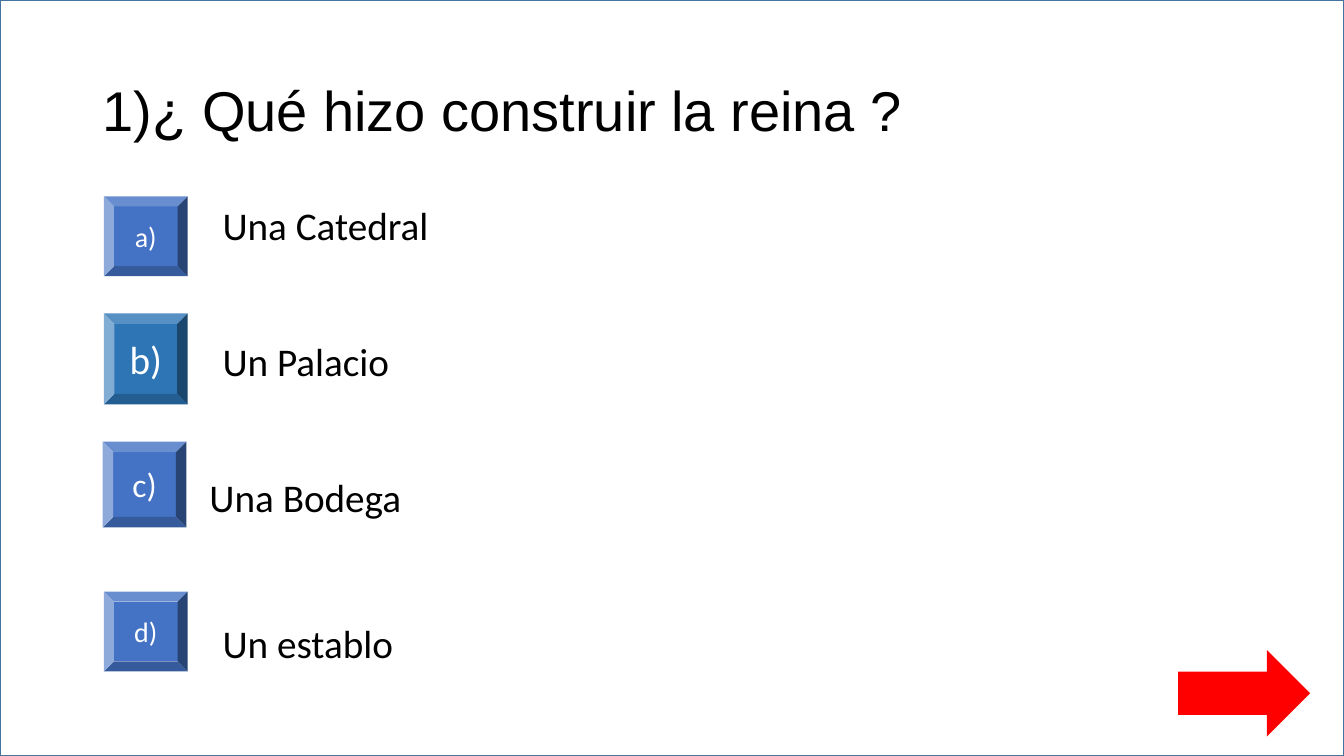
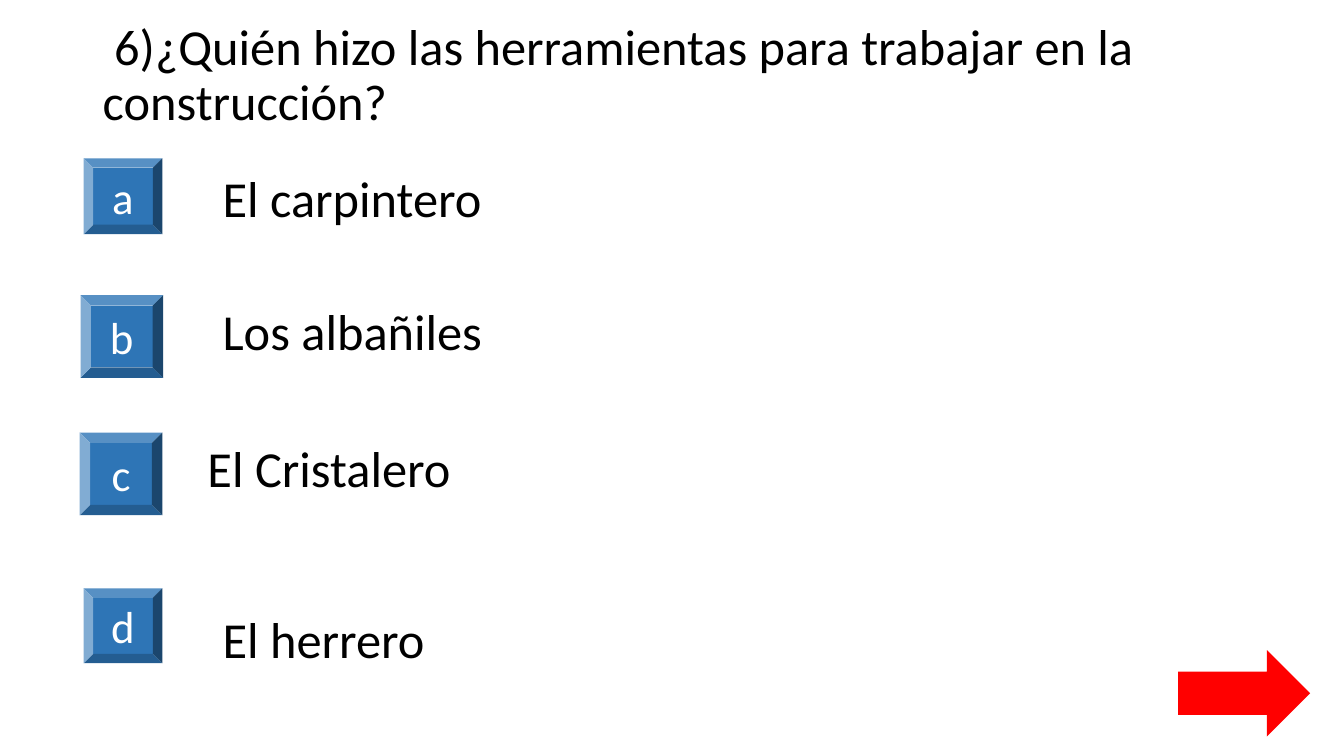
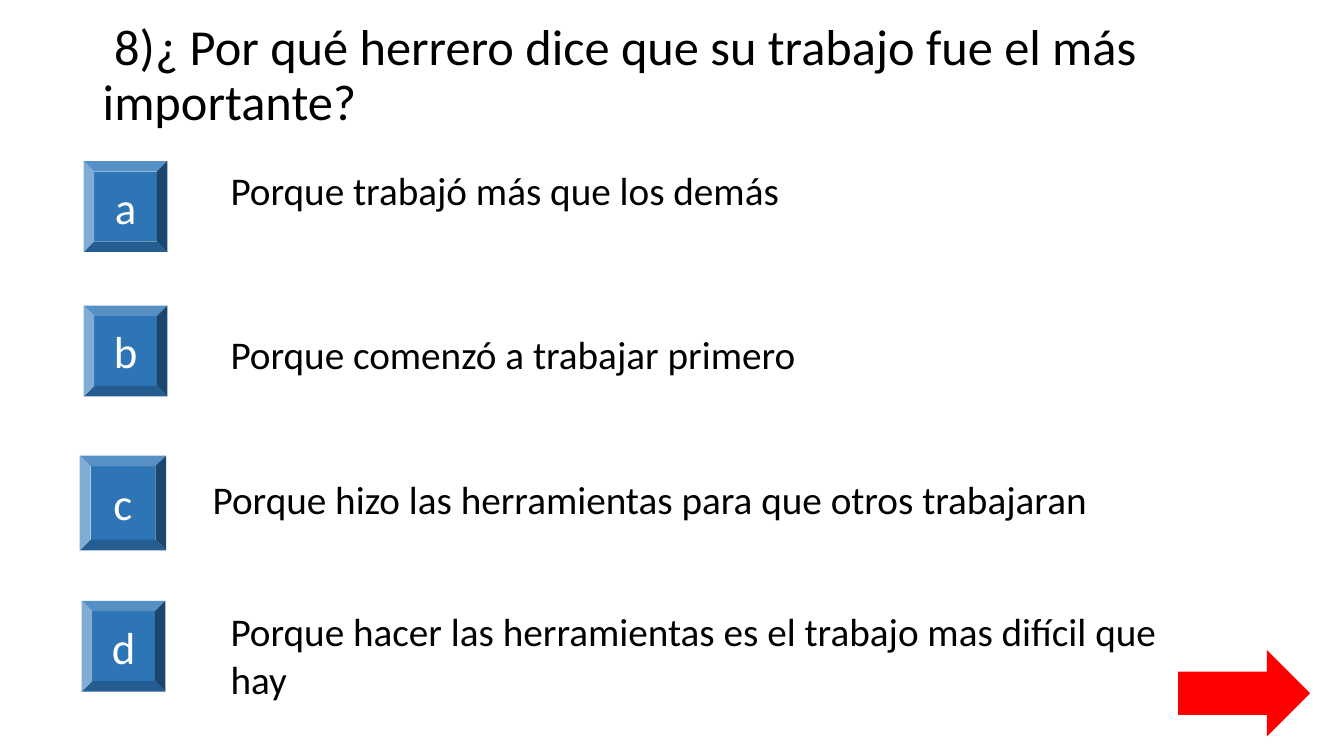
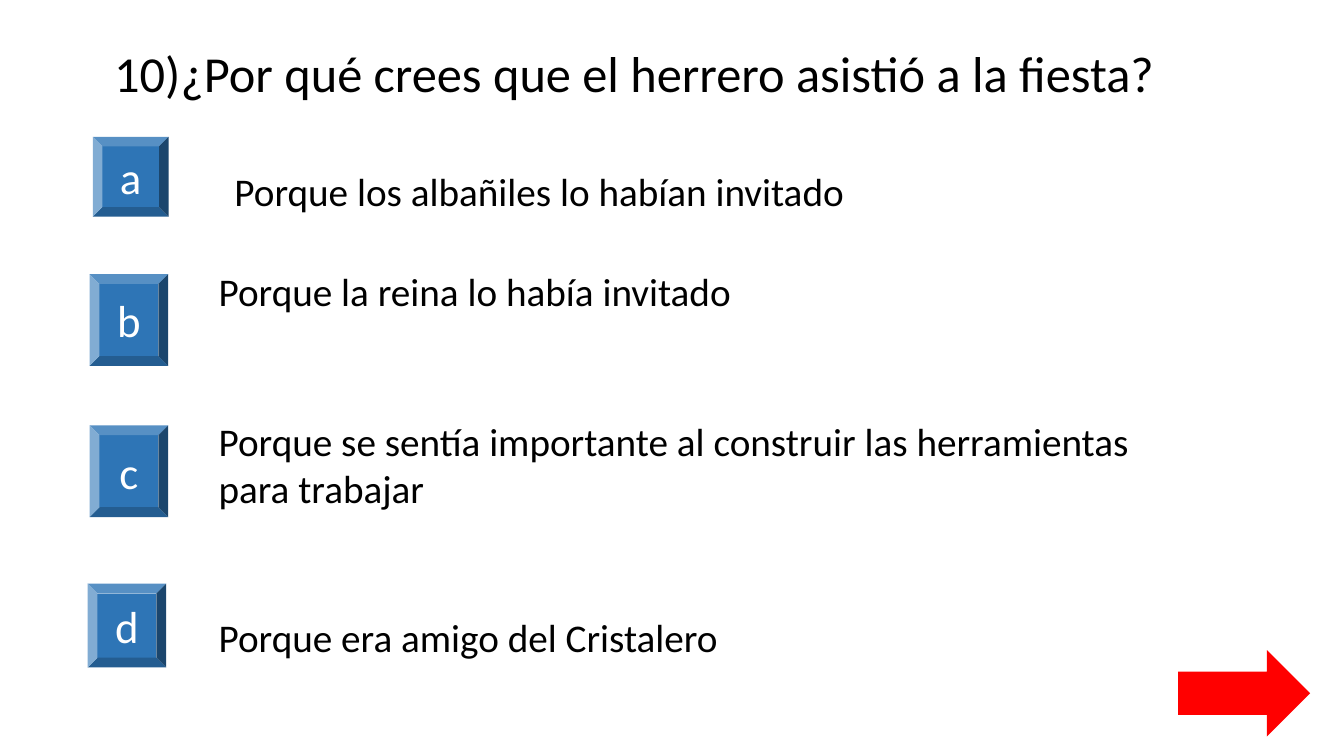
from dataclasses import dataclass

from pptx import Presentation
from pptx.dml.color import RGBColor as Rgb
from pptx.enum.shapes import MSO_SHAPE as Kind
from pptx.enum.text import MSO_ANCHOR as Anchor, MSO_AUTO_SIZE as Fit, PP_ALIGN as Align
from pptx.util import Cm, Pt


# Colours, fonts and type sizes
@dataclass(frozen=True)
class Theme:
    white: str = "FFFFFF"
    black: str = "000000"
    frame: str = "43739E"
    blue: str = "2E75B6"
    royal: str = "4472C4"
    red: str = "FF0000"
    plain: str = "Calibri"
    sans: str = "Arial"
    tiny: int = 20
    small: int = 24
    text: int = 28
    key: int = 32
    head: int = 36
    large: int = 40


LOOK = Theme()
WIDE, HIGH = 33.87, 19.05


def apply(target, values):
    for name, value in values.items():
        setattr(target, name, value)


class Quiz:
    """Holds the style and the current slide."""

    def __init__(self, look):
        self.look = look
        self.deck = Presentation()
        apply(self.deck, {"slide_width": Cm(WIDE), "slide_height": Cm(HIGH)})
        self.slide = None

    def page(self):
        self.slide = self.deck.slides.add_slide(self.deck.slide_layouts[6])

    def label(self, shape, text, size, color, font, frame, para):
        box = shape.text_frame
        apply(box, {"word_wrap": True, **frame})
        line = box.paragraphs[0]
        apply(line, para)
        run = line.add_run()
        run.text = text
        apply(run.font, {"size": Pt(size), "name": font})
        run.font.color.rgb = Rgb.from_string(color)
        return line

    def shape(self, kind, spot, fill, edge=None):
        item = self.slide.shapes.add_shape(kind, *map(Cm, spot))
        item.shadow.inherit = False
        item.fill.solid()
        item.fill.fore_color.rgb = Rgb.from_string(fill)
        if edge:
            item.line.color.rgb = Rgb.from_string(edge)
            item.line.width = Pt(1)
        else:
            item.line.fill.background()
        return item

    def frame(self):
        self.shape(Kind.RECTANGLE, (0, 0, WIDE, HIGH), self.look.white, self.look.frame)

    def title(self, text, top=1.02, size=LOOK.head, font=LOOK.plain, indent=0.29):
        box = self.slide.shapes.add_textbox(Cm(2.34), Cm(top), Cm(29.21), Cm(1.82))
        line = self.label(box, text, size, self.look.black, font,
                          {"vertical_anchor": Anchor.MIDDLE, "auto_size": Fit.NONE},
                          {"line_spacing": 0.9})
        # First-line indent
        line._p.get_or_add_pPr().set("indent", str(int(Cm(indent))))

    def button(self, text, spot, size=LOOK.key, fill=LOOK.blue):
        item = self.shape(Kind.BEVEL, spot, fill)
        self.label(item, text, size, self.look.white, self.look.plain,
                   {"vertical_anchor": Anchor.MIDDLE}, {"alignment": Align.CENTER})

    def answer(self, text, spot, size=LOOK.text, lines=1):
        # Height follows the number of lines, plus the insets
        tall = lines * Pt(size * 1.2) + Cm(0.26)
        box = self.slide.shapes.add_textbox(*map(Cm, spot), tall)
        self.label(box, text, size, self.look.black, self.look.plain,
                   {"auto_size": Fit.SHAPE_TO_FIT_TEXT}, {"alignment": Align.LEFT})

    def arrow(self):
        self.shape(Kind.RIGHT_ARROW, (29.69, 16.38, 3.33, 2.18), self.look.red)


# Each row: button place, answer place (left, top, width), answer, extra formats
PAGES = [
    {
        "title": {"text": "1)¿ Qué hizo construir la reina ?", "top": 1.95,
                  "size": LOOK.large, "font": LOOK.sans, "indent": 0},
        "frame": True,
        "mark": ")",
        "keys": [{"size": LOOK.tiny, "fill": LOOK.royal}, {"size": LOOK.text},
                 {"size": LOOK.small, "fill": LOOK.royal},
                 {"size": LOOK.tiny, "fill": LOOK.royal}],
        "rows": [
            ((2.62, 4.95, 2.11, 2.01), (5.36, 4.95, 14.48), "Una Catedral", {}),
            ((2.62, 7.9, 2.11, 2.29), (5.36, 8.38, 12.62), "Un Palacio", {}),
            ((2.59, 11.13, 2.11, 2.16), (5.03, 11.81, 15.11), "Una Bodega", {}),
            ((2.62, 14.91, 2.11, 2.01), (5.36, 15.47, 9.58), "Un establo", {}),
        ],
    },
    {
        "title": {"text": "6)¿Quién hizo las herramientas para trabajar en la construcción?"},
        "size": LOOK.head,
        "rows": [
            ((2.11, 3.99, 1.98, 1.91), (5.36, 4.09, 14.12), "El carpintero", {}),
            ((2.03, 7.44, 2.08, 2.08), (5.36, 7.44, 9.32), "Los albañiles", {}),
            ((2.01, 10.9, 2.08, 2.08), (4.98, 10.9, 11.94), "El Cristalero", {}),
            ((2.11, 14.83, 1.98, 1.88), (5.36, 15.19, 11.94), "El herrero", {}),
        ],
    },
    {
        "title": {"text": "8)¿ Por qué herrero dice que su trabajo fue el más importante?"},
        "rows": [
            ((2.11, 4.06, 2.11, 2.29), (5.56, 4.06, 26.67),
             "Porque trabajó más que los demás", {}),
            ((2.11, 7.7, 2.11, 2.29), (5.56, 8.2, 20.6),
             "Porque comenzó a trabajar primero", {}),
            ((2.01, 11.48, 2.18, 2.39), (5.11, 11.84, 25.88),
             "Porque hizo las herramientas para que otros trabajaran", {}),
            ((2.06, 15.14, 2.11, 2.29), (5.56, 15.19, 24.97),
             "Porque hacer las herramientas es el trabajo mas difícil que hay", {"lines": 2}),
        ],
    },
    {
        "title": {"text": "10)¿Por qué crees que el herrero asistió a la fiesta?"},
        "rows": [
            ((2.34, 3.45, 1.91, 2.01), (5.66, 4.09, 22.81),
             "Porque los albañiles lo habían invitado", {}),
            ((2.26, 6.91, 1.98, 2.31), (5.26, 6.6, 25.58),
             "Porque la reina lo había invitado", {}),
            ((2.26, 10.72, 1.98, 2.31), (5.26, 10.39, 24.89),
             "Porque se sentía importante al construir las herramientas para trabajar",
             {"lines": 2}),
            ((2.21, 14.71, 1.98, 2.11), (5.26, 15.34, 14.61),
             "Porque era amigo del Cristalero", {}),
        ],
    },
]


def main():
    quiz = Quiz(LOOK)
    for page in PAGES:
        quiz.page()
        if page.get("frame"):
            quiz.frame()
        quiz.title(**page["title"])
        keys = page.get("keys", [{}] * 4)
        for letter, key, (spot, place, text, extra) in zip("abcd", keys, page["rows"]):
            quiz.button(letter + page.get("mark", ""), spot, **key)
            quiz.answer(text, place, page.get("size", LOOK.text), **extra)
        quiz.arrow()
    quiz.deck.save("out.pptx")


if __name__ == "__main__":
    main()
